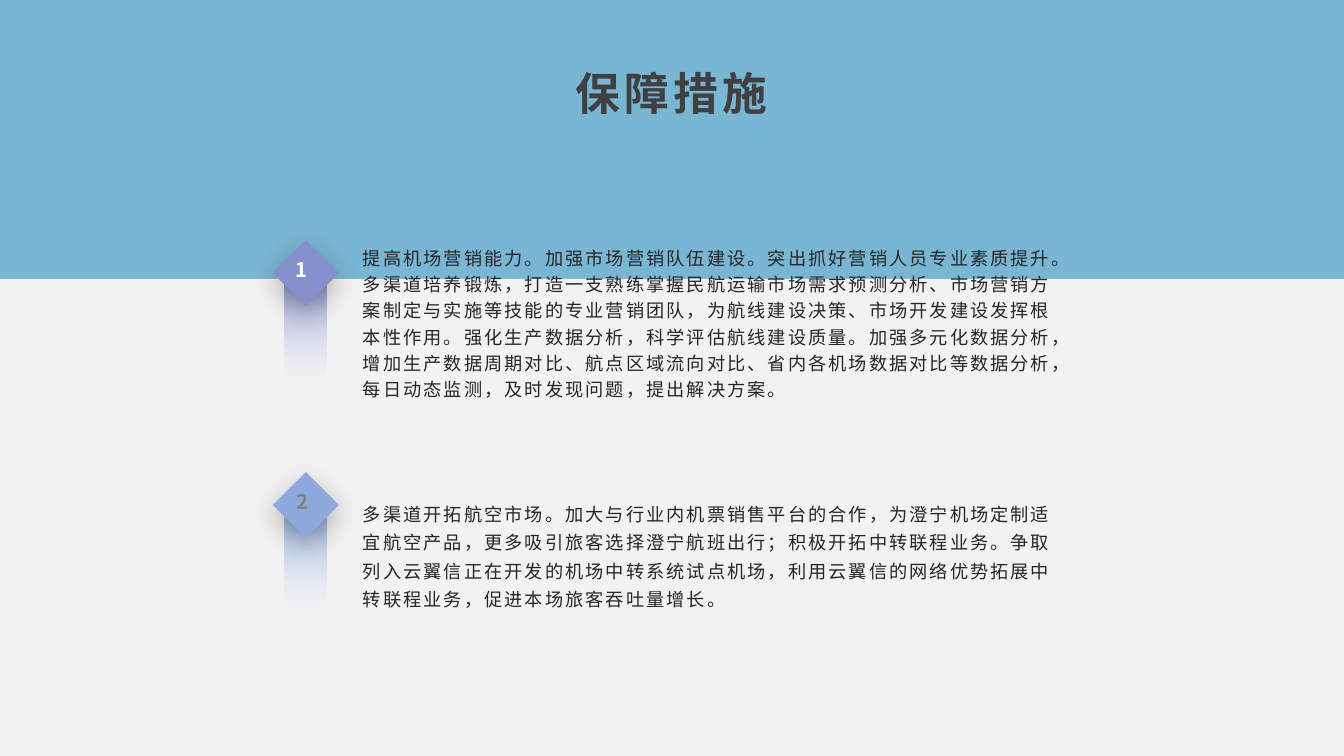
import pptx
import pptx.util
import pptx.dml.color
import pptx.enum.shapes
import pptx.enum.text
import pptx.oxml.ns
from lxml import etree

RGB = pptx.dml.color.RGBColor
SHAPE = pptx.enum.shapes.MSO_SHAPE
ALIGN = pptx.enum.text.PP_ALIGN
ANCHOR = pptx.enum.text.MSO_ANCHOR
qn = pptx.oxml.ns.qn

SKY = RGB(0x79, 0xB6, 0xD3)
PALE = RGB(0xF2, 0xF2, 0xF2)
WHITE = RGB(0xFF, 0xFF, 0xFF)
GREY = RGB(0x80, 0x80, 0x80)
HEADING = RGB(0x40, 0x40, 0x40)
BODY = RGB(0x26, 0x26, 0x26)
PURPLE = RGB(0x85, 0x90, 0xCA)
BLUE = RGB(0x8E, 0xAA, 0xDC)
FONT = "Noto Sans CJK SC"
ROW_STEP = 232


def px(*lengths):
    return [pptx.util.Emu(round(n * 914400 / 100.8)) for n in lengths]


def write(holder, text, size, color, bold=False, spacing=0, line=1.0, after=0,
          align=ALIGN.LEFT, anchor=ANCHOR.MIDDLE, insets=(10, 5)):
    frame = holder.text_frame
    frame.word_wrap = True
    frame.auto_size = pptx.enum.text.MSO_AUTO_SIZE.NONE
    frame.vertical_anchor = anchor
    frame.margin_left = frame.margin_right = px(insets[0])[0]
    frame.margin_top = frame.margin_bottom = px(insets[1])[0]
    paragraph = frame.paragraphs[0]
    paragraph.alignment = align
    paragraph.line_spacing = line
    paragraph.space_before = pptx.util.Pt(0)
    paragraph.space_after = pptx.util.Pt(after)
    run = paragraph.add_run()
    run.text = text
    run.font.size = pptx.util.Pt(size)
    run.font.bold = bold
    run.font.color.rgb = color
    run.font.name = FONT
    properties = run.font._element
    properties.set("spc", str(round(spacing * 100)))
    etree.SubElement(properties, qn("a:ea"), typeface=FONT)


deck = pptx.Presentation()
deck.slide_width, deck.slide_height = px(1344, 756)
slide = deck.slides.add_slide(deck.slide_layouts[5])
slide.background.fill.solid()
slide.background.fill.fore_color.rgb = SKY
shapes = slide.shapes

title = shapes.title
title.left, title.top, title.width, title.height = px(50, 68, 1243, 70)
write(title, "保障措施", size=32, color=HEADING, bold=True, spacing=3, line=0.9,
      after=8, align=ALIGN.CENTER, anchor=ANCHOR.TOP, insets=(8, 4))

lower_panel = shapes.add_shape(SHAPE.RECTANGLE, *px(0, 279, 1344, 477))
lower_panel.shadow.inherit = False
lower_panel.fill.solid()
lower_panel.fill.fore_color.rgb = PALE
lower_panel.line.fill.background()

measures = [
    (PURPLE, WHITE, 1.2,
     "提高机场营销能力。加强市场营销队伍建设。突出抓好营销人员专业素质提升。"
     "多渠道培养锻炼，打造一支熟练掌握民航运输市场需求预测分析、市场营销方案制定与实施等技能的专业营销团队，"
     "为航线建设决策、市场开发建设发挥根本性作用。强化生产数据分析，科学评估航线建设质量。"
     "加强多元化数据分析，增加生产数据周期对比、航点区域流向对比、省内各机场数据对比等数据分析，"
     "每日动态监测，及时发现问题，提出解决方案。"),
    (BLUE, GREY, 1.3,
     "多渠道开拓航空市场。加大与行业内机票销售平台的合作，为澄宁机场定制适宜航空产品，"
     "更多吸引旅客选择澄宁航班出行；积极开拓中转联程业务。"
     "争取列入云翼信正在开发的机场中转系统试点机场，利用云翼信的网络优势拓展中转联程业务，"
     "促进本场旅客吞吐量增长。"),
]

for row, (accent, number_color, line, wording) in enumerate(measures):
    drop = row * ROW_STEP
    measure = shapes.add_textbox(*px(353, 231 + drop, 719, 181))
    write(measure, wording, size=13, color=BODY, spacing=1.5, line=line)

    ribbon = shapes.add_shape(SHAPE.RECTANGLE, *px(285, 277 + drop, 42, 123))
    ribbon.shadow.inherit = False
    ribbon.line.fill.background()
    ribbon.fill.gradient()
    ribbon.fill.gradient_angle = 90
    for stop, color in zip(ribbon.fill.gradient_stops, (WHITE, accent)):
        stop.color.rgb = color
    clear_end = ribbon._element.spPr.find(".//" + qn("a:srgbClr"))
    etree.SubElement(clear_end, qn("a:alpha"), val="0")

    diamond = shapes.add_shape(SHAPE.FLOWCHART_DECISION, *px(273, 240 + drop, 66, 66))
    diamond.shadow.inherit = False
    diamond.fill.solid()
    diamond.fill.fore_color.rgb = accent
    diamond.line.fill.background()
    effects = diamond._element.spPr.find(qn("a:effectLst"))
    shadow = etree.SubElement(effects, qn("a:outerShdw"), blurRad=str(pptx.util.Pt(20)),
                              dist=str(pptx.util.Pt(6)), dir="5400000", rotWithShape="0")
    shade = etree.SubElement(shadow, qn("a:srgbClr"), val="000000")
    etree.SubElement(shade, qn("a:alpha"), val="27000")

    number = shapes.add_textbox(*px(285 + row, 244 + drop, 31, 50))
    write(number, str(row + 1), size=14.4, color=number_color, bold=True)

deck.save("out.pptx")
